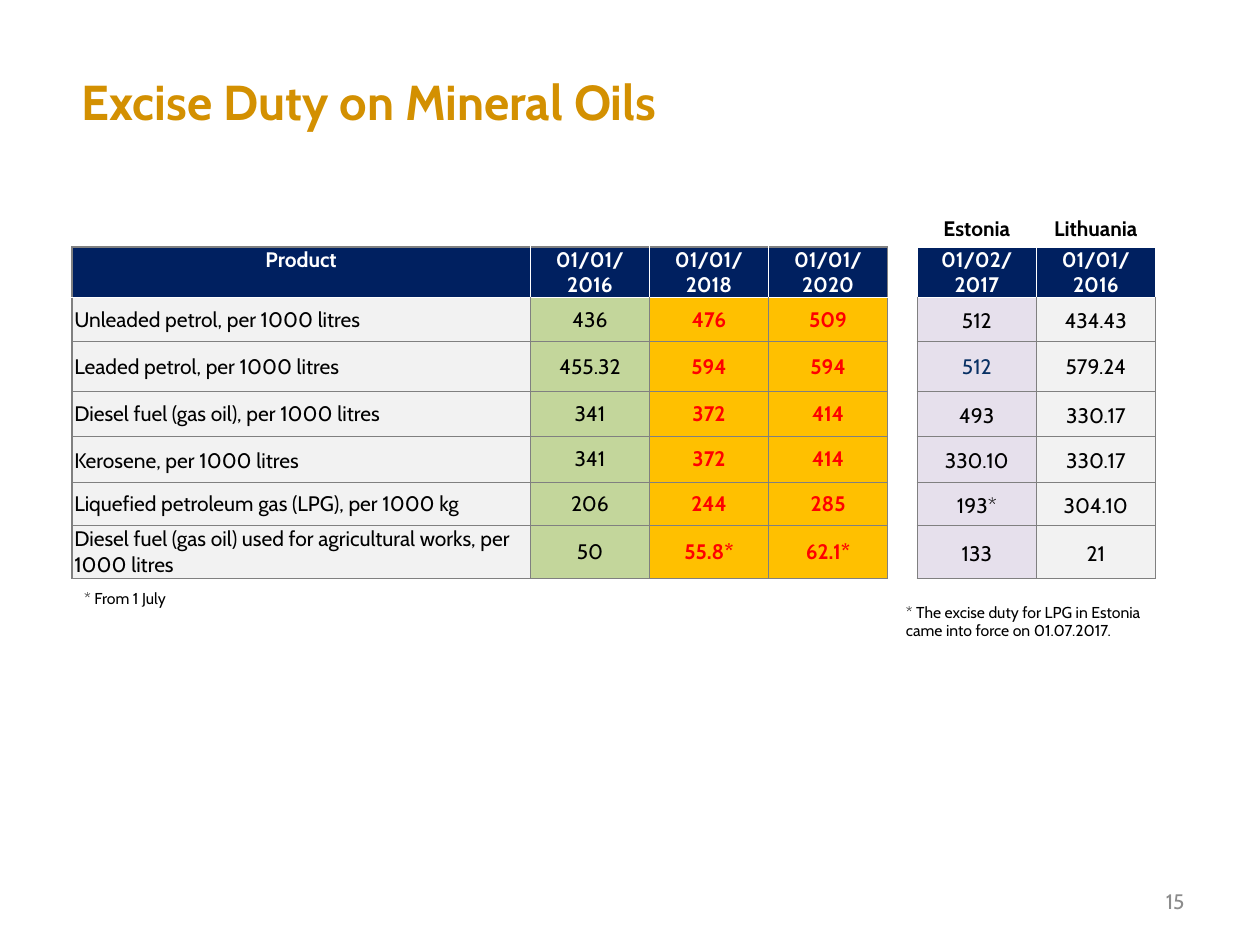
from lxml.etree import SubElement
from pptx import Presentation
from pptx.dml.color import RGBColor
from pptx.enum.text import MSO_ANCHOR, PP_ALIGN
from pptx.oxml.ns import qn
from pptx.util import Inches, Pt

WHITE = RGBColor(0xFF, 0xFF, 0xFF)
BLACK = RGBColor(0x00, 0x00, 0x00)
GOLD = RGBColor(0xD3, 0x90, 0x01)
NAVY = RGBColor(0x00, 0x20, 0x60)
BLUE_TEXT = RGBColor(0x08, 0x30, 0x64)
RED = RGBColor(0xFF, 0x00, 0x00)
GREY = RGBColor(0x80, 0x80, 0x80)
NUMBER_GREY = RGBColor(0x8C, 0x8C, 0x8C)
LIGHT = RGBColor(0xF2, 0xF2, 0xF2)
GREEN = RGBColor(0xC3, 0xD6, 0x9B)
AMBER = RGBColor(0xFF, 0xC0, 0x00)
LILAC = RGBColor(0xE6, 0xE0, 0xEC)

COL = 0.945
ROWS = [0.4, 0.35, 0.4, 0.35, 0.37, 0.34, 0.42]

LATVIA = [
    ["Product", "01/01/\n2016", "01/01/\n2018", "01/01/\n2020"],
    ["Unleaded petrol, per 1000 litres", "436", "476", "509"],
    ["Leaded petrol, per 1000 litres", "455.32", "594", "594"],
    ["Diesel fuel (gas oil), per 1000 litres", "341", "372", "414"],
    ["Kerosene, per 1000 litres", "341", "372", "414"],
    ["Liquefied petroleum gas (LPG), per 1000 kg", "206", "244", "285"],
    ["Diesel fuel (gas oil) used for agricultural works, per 1000 litres",
     "50", "55.8*", "62.1*"],
]
NEIGHBOURS = [
    ["Estonia", "Lithuania"],
    ["01/02/\n2017", "01/01/\n2016"],
    ["512", "434.43"],
    ["512", "579.24"],
    ["493", "330.17"],
    ["330.10", "330.17"],
    ["193*", "304.10"],
    ["133", "21"],
]


def write(tf, text, size=12, color=BLACK, bold=False, font="Cabin",
          align=PP_ALIGN.LEFT, spacing=None):
    """Fill a text frame, one paragraph per line of text."""
    for i, line in enumerate(text.split("\n")):
        p = tf.paragraphs[0] if i == 0 else tf.add_paragraph()
        p.alignment = align
        if spacing:
            p.line_spacing = spacing
        r = p.add_run()
        r.text = line
        r.font.name, r.font.size, r.font.bold = font, Pt(size), bold
        r.font.color.rgb = color


class SlideBuilder:
    def __init__(self, prs):
        self.s = prs.slides.add_slide(prs.slide_layouts[5])

    def title(self, text, x, y, w, h):
        sp = self.s.shapes.title
        sp.left, sp.top, sp.width, sp.height = map(Inches, (x, y, w, h))
        sp.fill.solid()
        sp.fill.fore_color.rgb = WHITE
        sp.text_frame.vertical_anchor = MSO_ANCHOR.MIDDLE
        write(sp.text_frame, text, size=28, color=GOLD, bold=True)

    def text(self, text, x, y, w, h, wrap=True, anchor=MSO_ANCHOR.TOP,
             inset=(0.1, 0.05), **fmt):
        sp = self.s.shapes.add_textbox(*map(Inches, (x, y, w, h)))
        tf = sp.text_frame
        tf.word_wrap, tf.vertical_anchor = wrap, anchor
        tf.margin_left = tf.margin_right = Inches(inset[0])
        tf.margin_top = tf.margin_bottom = Inches(inset[1])
        write(tf, text, **fmt)

    def table(self, x, y, widths, heights, data, style):
        """Build a table; style(row, col) gives fill, borders and text format."""
        frame = self.s.shapes.add_table(
            len(heights), len(widths), Inches(x), Inches(y),
            Inches(sum(widths)), Inches(sum(heights)))
        table = frame.table
        table.first_row = table.horz_banding = False
        for column, w in zip(table.columns, widths):
            column.width = Inches(w)
        for row, h in zip(table.rows, heights):
            row.height = Inches(h)
        for i, values in enumerate(data):
            for j, value in enumerate(values):
                fill, borders, anchor, fmt = style(i, j)
                self.cell(table.cell(i, j), value, fill, borders, anchor, fmt)

    def cell(self, cell, value, fill, borders, anchor, fmt):
        cell.margin_left = cell.margin_right = Inches(0.02)
        cell.margin_top = cell.margin_bottom = 0
        cell.vertical_anchor = anchor
        tc_pr = cell._tc.get_or_add_tcPr()
        for side, (color, width) in zip("LRTB", borders):
            ln = SubElement(tc_pr, qn(f"a:ln{side}"), w=str(Pt(width)))
            solid = SubElement(ln, qn("a:solidFill"))
            SubElement(solid, qn("a:srgbClr"), val=str(color))
        cell.fill.solid()
        cell.fill.fore_color.rgb = fill
        write(cell.text_frame, value, **fmt)


def body_borders(row, last):
    """Left, right, top and bottom lines of a body row counted from 1."""
    top = (WHITE, 1) if row == 1 else (GREY, 0.5)
    bottom = (GREY, 1 if row == last else 0.5)
    return [(GREY, 1), (GREY, 1), top, bottom]


def header_format(color):
    return dict(color=color, bold=True, align=PP_ALIGN.CENTER)


def latvia_style(i, j):
    if i == 0:
        borders = [(GREY if j == 0 else WHITE, 1), (GREY if j == 3 else WHITE, 1),
                   (GREY, 1), (WHITE, 1)]
        return NAVY, borders, MSO_ANCHOR.TOP, header_format(WHITE)
    fmt = dict(color=RED if j > 1 else BLACK, bold=j > 1,
               align=PP_ALIGN.CENTER if j else PP_ALIGN.LEFT,
               spacing=1.15 if (i, j) == (4, 0) else None)
    fill = (LIGHT, GREEN, AMBER, AMBER)[j]
    return fill, body_borders(i, 6), MSO_ANCHOR.MIDDLE, fmt


def neighbour_style(i, j):
    white = [(WHITE, 1)] * 4
    if i == 0:
        return WHITE, white, MSO_ANCHOR.MIDDLE, header_format(BLACK)
    if i == 1:
        return NAVY, white, MSO_ANCHOR.TOP, header_format(WHITE)
    fmt = dict(color=BLUE_TEXT if (i, j) == (3, 0) else BLACK,
               align=PP_ALIGN.CENTER, spacing=None if i == 3 else 1.15)
    return (LILAC, LIGHT)[j], body_borders(i - 1, 6), MSO_ANCHOR.MIDDLE, fmt


def main():
    prs = Presentation()
    prs.slide_width, prs.slide_height = Inches(10), Inches(7.5)
    slide = SlideBuilder(prs)

    # Title and slide number
    slide.title("Excise Duty on Mineral Oils", 0.55, 0.53, 5.95, 0.55)
    slide.text("15", 7.17, 6.95, 2.33, 0.4, anchor=MSO_ANCHOR.MIDDLE,
               color=NUMBER_GREY, align=PP_ALIGN.RIGHT)

    # Duty rates and comparison with the neighbours
    slide.table(0.57, 1.96, [3.64] + [COL] * 3, ROWS, LATVIA, latvia_style)
    slide.table(7.28, 1.67, [COL] * 2, [0.29] + ROWS, NEIGHBOURS, neighbour_style)

    # Footnotes
    slide.text("* From 1 July", 0.57, 4.62, 0.95, 0.25, wrap=False, size=9)
    slide.text("* The excise duty for LPG in Estonia came into force on 01.07.2017.",
               7.12, 4.74, 2.21, 0.38, anchor=MSO_ANCHOR.MIDDLE,
               inset=(0.07, 0.04), size=9)

    prs.save("out.pptx")


if __name__ == "__main__":
    main()
